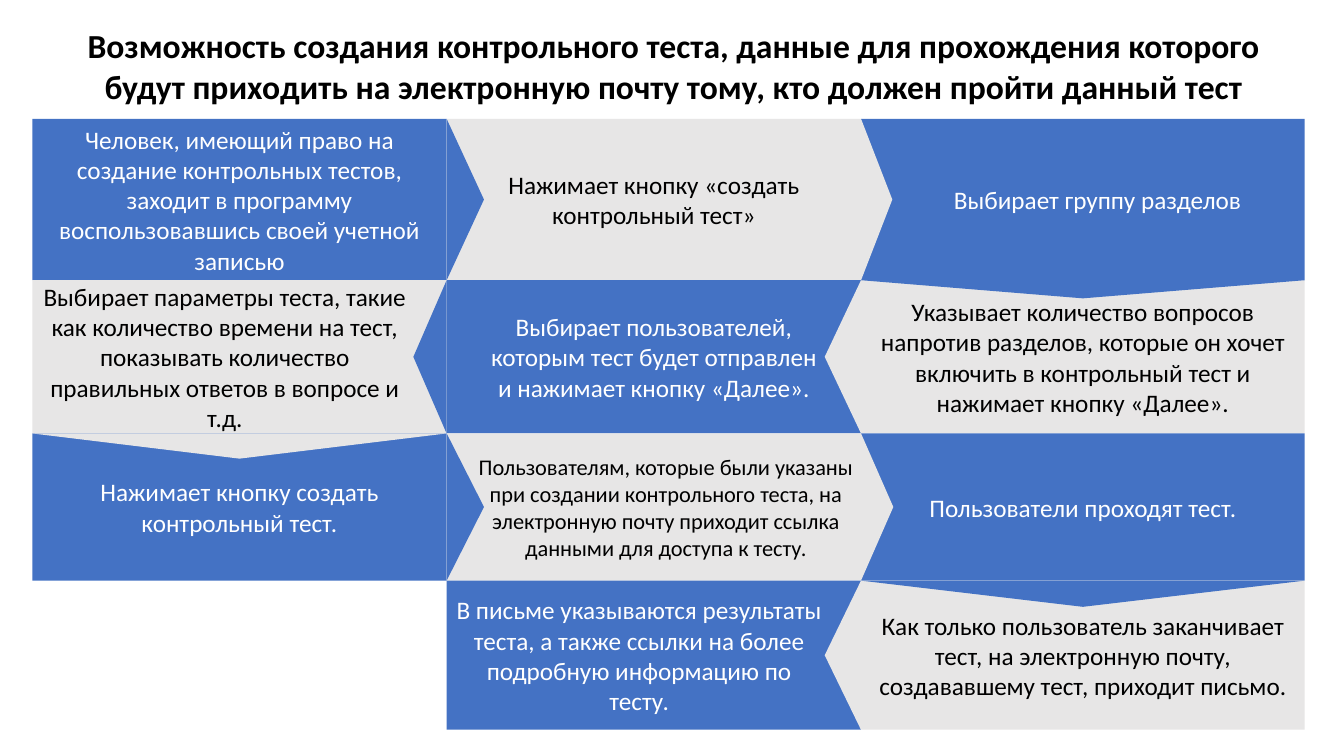
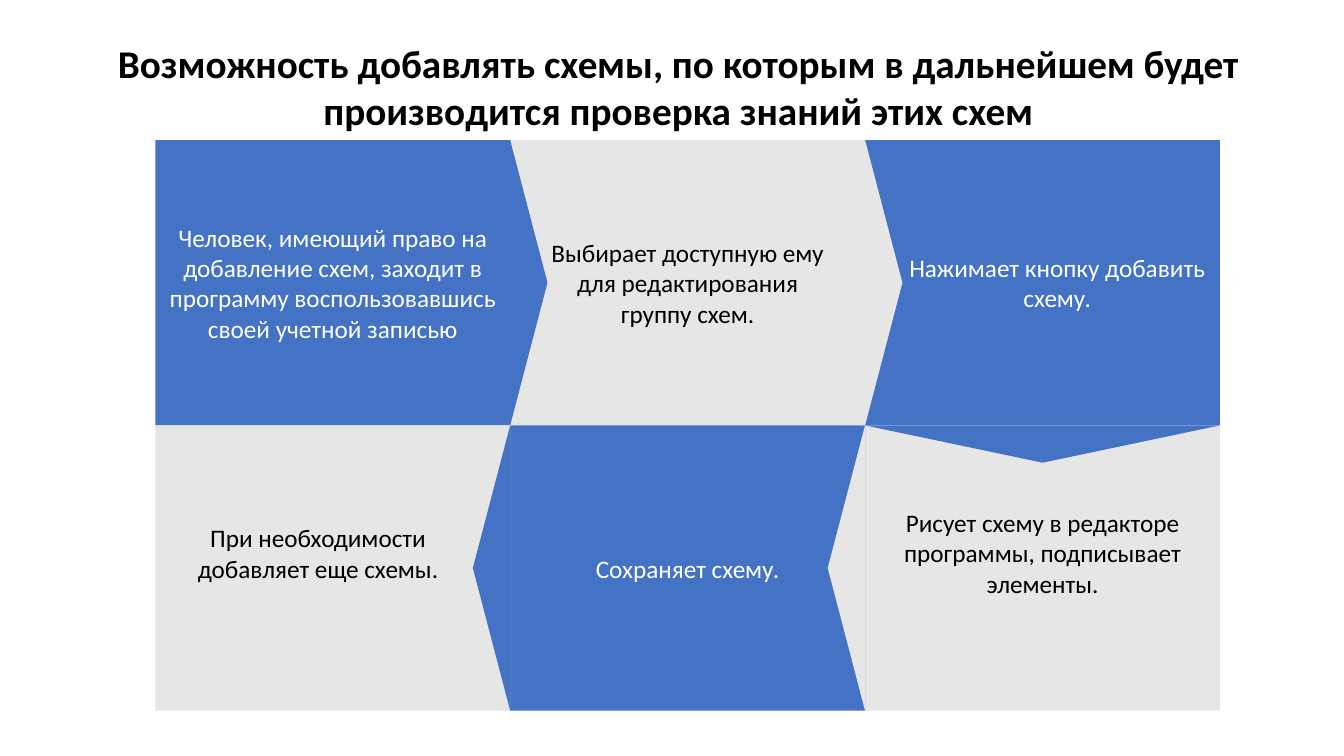
from dataclasses import dataclass
from itertools import accumulate

from pptx import Presentation
from pptx.dml.color import RGBColor
from pptx.enum.shapes import MSO_SHAPE as Shape
from pptx.enum.text import MSO_ANCHOR as Anchor, MSO_AUTO_SIZE as AutoSize, PP_ALIGN as Align
from pptx.util import Inches, Pt


@dataclass(frozen=True)
class Theme:
    font: str = "Calibri"
    ink: str = "000000"
    tones: tuple = (("4472C4", "FFFFFF"), ("E7E6E6", "000000"))
    body: int = 18
    small: int = 16
    pad: float = 0.1
    thin_pad: float = 0.05
    arrow_pad: float = 0.39


THEME = Theme()


@dataclass(frozen=True)
class Step:
    text: str
    left: float = THEME.pad
    right: float = THEME.pad
    bottom: float = THEME.thin_pad
    size: int = THEME.body
    depth: float = 0.37


class Grid:
    def __init__(self, left, top, widths, heights):
        self.xs = list(accumulate(widths, initial=left))
        self.ys = list(accumulate(heights, initial=top))
        self.columns = len(widths)

    def place(self, index):
        row, offset = divmod(index, self.columns)
        return (self.columns - 1 - offset if row % 2 else offset), row

    def box(self, column, row):
        x, y = self.xs[column], self.ys[row]
        return x, y, self.xs[column + 1] - x, self.ys[row + 1] - y


class FlowDeck:
    def __init__(self, theme):
        self.theme = theme
        self.deck = Presentation()
        self.deck.slide_width, self.deck.slide_height = Inches(13.33), Inches(7.5)
        self.slide = None

    def new_slide(self):
        self.slide = self.deck.slides.add_slide(self.deck.slide_layouts[6])

    def add_text(self, frame, text, size, color, bold=False):
        frame.word_wrap = True
        paragraph = frame.paragraphs[0]
        paragraph.alignment = Align.CENTER
        run = paragraph.add_run()
        run.text = text
        run.font.name = self.theme.font
        run.font.size = Pt(size)
        run.font.bold = bold
        run.font.color.rgb = RGBColor.from_string(color)

    def title(self, text, box, size):
        heading = self.slide.shapes.add_textbox(*map(Inches, box))
        self.add_text(heading.text_frame, text, size, self.theme.ink, bold=True)
        heading.text_frame.auto_size = AutoSize.SHAPE_TO_FIT_TEXT

    def block(self, kind, box, fill):
        block = self.slide.shapes.add_shape(kind, *map(Inches, box))
        block.shadow.inherit = False
        block.fill.solid()
        block.fill.fore_color.rgb = RGBColor.from_string(fill)
        block.line.fill.background()
        return block

    def cell(self, step, box, tone):
        fill, ink = tone
        frame = self.block(Shape.RECTANGLE, box, fill).text_frame
        frame.vertical_anchor = Anchor.MIDDLE
        frame.margin_left, frame.margin_right = Inches(step.left), Inches(step.right)
        frame.margin_top, frame.margin_bottom = Inches(self.theme.thin_pad), Inches(step.bottom)
        self.add_text(frame, step.text, step.size, ink)

    def pointer(self, box, heading, depth, fill):
        x, y, width, height = box
        span = width if heading == 180 else height
        center_x, center_y = {
            90: (x + width + depth / 2, y + height / 2),
            180: (x + width / 2, y + height + depth / 2),
            270: (x - depth / 2, y + height / 2),
        }[heading]
        arrow = self.block(
            Shape.ISOSCELES_TRIANGLE,
            (center_x - span / 2, center_y - depth / 2, span, depth),
            fill,
        )
        arrow.rotation = heading

    def flow(self, grid, steps):
        places = [grid.place(index) for index in range(len(steps))]
        tones = [self.theme.tones[sum(place) % 2] for place in places]
        for step, place, tone in zip(steps, places, tones):
            self.cell(step, grid.box(*place), tone)
        for step, place, following, tone in zip(steps, places, places[1:], tones):
            heading = 180 - 90 * (following[0] - place[0])
            self.pointer(grid.box(*place), heading, step.depth, tone[0])


WIDE = THEME.arrow_pad

CONTROL_TEST = [
    Step("Человек, имеющий право на создание контрольных тестов, заходит в программу "
         "воспользовавшись своей учетной записью"),
    Step("Нажимает кнопку «создать контрольный тест»", left=WIDE, right=WIDE, depth=0.31),
    Step("Выбирает группу разделов", left=WIDE, depth=0.18),
    Step("Указывает количество вопросов напротив разделов, которые он хочет включить "
         "в контрольный тест и нажимает кнопку «Далее».", depth=0.36),
    Step("Выбирает пользователей, которым тест будет отправлен и нажимает кнопку «Далее».",
         left=WIDE, right=WIDE, depth=0.33),
    Step("Выбирает параметры теста, такие как количество времени на тест, показывать "
         "количество правильных ответов в вопросе и т.д.", right=WIDE, depth=0.25),
    Step("Нажимает кнопку создать контрольный тест."),
    Step("Пользователям, которые были указаны при создании контрольного теста, "
         "на электронную почту приходит ссылка данными для доступа к тесту.",
         left=0.24, right=0, size=THEME.small, depth=0.32),
    Step("Пользователи проходят тест.", depth=0.26),
    Step("Как только пользователь заканчивает тест, на электронную почту, "
         "создававшему тест, приходит письмо.", depth=0.36),
    Step("В письме указываются результаты теста, а также ссылки на более подробную "
         "информацию по тесту.", right=WIDE),
]

SCHEMES = [
    Step("Человек, имеющий право на добавление схем, заходит в программу "
         "воспользовавшись своей учетной записью"),
    Step("Выбирает доступную ему для редактирования группу схем.", left=WIDE, right=WIDE),
    Step("Нажимает кнопку добавить схему.", left=WIDE),
    Step("Рисует схему в редакторе программы, подписывает элементы.", bottom=0.35),
    Step("Сохраняет схему."),
    Step("При необходимости добавляет еще схемы.", right=WIDE, bottom=0.35),
]


def main():
    flow_deck = FlowDeck(THEME)

    flow_deck.new_slide()
    flow_deck.title("Возможность создания контрольного теста, данные для прохождения которого "
                    "будут приходить на электронную почту тому, кто должен пройти данный тест",
                    (0.52, 0.2, 12.32, 0.91), 24)
    flow_deck.flow(Grid(0.32, 1.18, (4.11, 4.11, 4.4), (1.6, 1.52, 1.46, 1.48)), CONTROL_TEST)

    flow_deck.new_slide()
    flow_deck.title("Возможность добавлять схемы, по которым в дальнейшем будет "
                    "производится проверка знаний этих схем",
                    (0.8, 0.34, 11.85, 1.04), 28)
    flow_deck.flow(Grid(1.54, 1.39, [3.52] * 3, [2.83] * 2), SCHEMES)

    flow_deck.deck.save("out.pptx")


if __name__ == "__main__":
    main()
